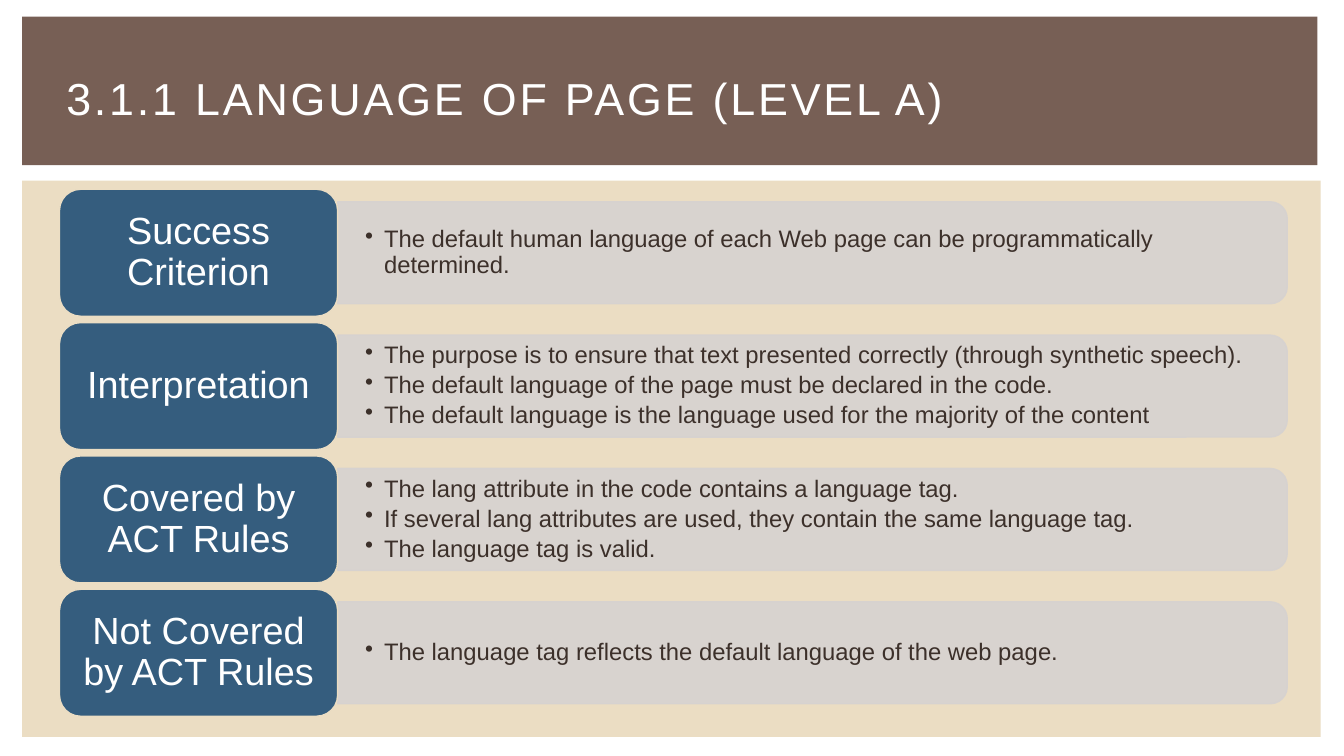
from lxml import etree
from pptx import Presentation
from pptx.dml.color import RGBColor
from pptx.enum.shapes import MSO_SHAPE
from pptx.enum.text import MSO_ANCHOR, MSO_AUTO_SIZE, PP_ALIGN
from pptx.oxml.ns import qn
from pptx.util import Cm, Pt

RECT = MSO_SHAPE.RECTANGLE
ROUNDED = MSO_SHAPE.ROUNDED_RECTANGLE
TWO_ROUNDED = MSO_SHAPE.ROUND_2_SAME_RECTANGLE
LEFT, CENTER = PP_ALIGN.LEFT, PP_ALIGN.CENTER
MIDDLE = MSO_ANCHOR.MIDDLE

WHITE = RGBColor(0xFF, 0xFF, 0xFF)
BROWN = RGBColor(0x77, 0x5F, 0x55)
SAND = RGBColor(0xEB, 0xDD, 0xC3)
GREY = RGBColor(0xD6, 0xD2, 0xD1)
BLUE = RGBColor(0x35, 0x5D, 0x7E)
DARK = RGBColor(0x3C, 0x30, 0x2A)
FONT = "Arial"

TITLE = "3.1.1 LANGUAGE OF PAGE (LEVEL A)"
SECTIONS = [
    ("Success Criterion", [
        "The default human language of each Web page can be programmatically determined.",
    ]),
    ("Interpretation", [
        "The purpose is to ensure that text presented correctly (through synthetic speech).",
        "The default language of the page must be declared in the code.",
        "The default language is the language used for the majority of the content",
    ]),
    ("Covered by ACT Rules", [
        "The lang attribute in the code contains a language tag.",
        "If several lang attributes are used, they contain the same language tag.",
        "The language tag is valid.",
    ]),
    ("Not Covered by ACT Rules", [
        "The language tag reflects the default language of the web page.",
    ]),
]

# Lengths in centimetres
BANDS = [(BROWN, (0.56, 0.42, 32.64, 3.74)), (SAND, (0.56, 4.55, 32.72, 14.02))]
FIRST_CENTER, ROW_PITCH = 6.37, 3.36
LABEL_LEFT, LABEL_WIDTH, LABEL_HEIGHT = 1.5, 7.01, 3.2
PANEL_WIDTH, PANEL_HEIGHT = 23.93, 2.57
PANEL_LEFT = LABEL_LEFT + LABEL_WIDTH
POINTS_WIDTH, POINTS_HEIGHT = 23.8, 2.31
BULLET_INDENT = Cm(0.48)


def add_filled(slide, kind, box, fill, line=None):
    shape = slide.shapes.add_shape(kind, *map(Cm, box))
    shape.shadow.inherit = False
    shape.fill.solid()
    shape.fill.fore_color.rgb = fill
    if line is None:
        shape.line.fill.background()
    else:
        shape.line.color.rgb = line
        shape.line.width = Pt(1)
    return shape


def format_frame(frame, size, color, align, margins, spacing=1, after=0):
    """Format all text of a frame; margins are (horizontal, vertical) in cm."""
    frame.word_wrap = True
    frame.auto_size = MSO_AUTO_SIZE.NONE
    frame.vertical_anchor = MIDDLE
    frame.margin_left = frame.margin_right = Cm(margins[0])
    frame.margin_top = frame.margin_bottom = Cm(margins[1])
    for paragraph in frame.paragraphs:
        paragraph.alignment = align
        paragraph.line_spacing = spacing
        paragraph.space_after = Pt(after)
        for run in paragraph.runs:
            run.font.name = FONT
            run.font.size = Pt(size)
            run.font.color.rgb = color


def add_bullet(paragraph):
    properties = paragraph._p.get_or_add_pPr()
    properties.set("marL", str(BULLET_INDENT))
    properties.set("indent", str(-BULLET_INDENT))
    etree.SubElement(properties, qn("a:buChar")).set("char", "•")


def add_panel(slide, center):
    """Turn a top-rounded bar by 90° so that its right end is rounded."""
    middle = PANEL_LEFT + PANEL_WIDTH / 2
    box = (middle - PANEL_HEIGHT / 2, center - PANEL_WIDTH / 2, PANEL_HEIGHT, PANEL_WIDTH)
    panel = add_filled(slide, TWO_ROUNDED, box, GREY, GREY)
    panel.rotation = 90
    for color in panel._element.spPr.iter(qn("a:srgbClr")):
        etree.SubElement(color, qn("a:alpha")).set("val", "90000")


def add_points(slide, center, points):
    box = (PANEL_LEFT, center - POINTS_HEIGHT / 2, POINTS_WIDTH, POINTS_HEIGHT)
    frame = slide.shapes.add_textbox(*map(Cm, box)).text_frame
    frame.text = "\n".join(points)
    format_frame(frame, 17, DARK, LEFT, (0.69, 0.36), 0.9, 3)
    for paragraph in frame.paragraphs:
        add_bullet(paragraph)


def add_label(slide, center, heading):
    box = (LABEL_LEFT, center - LABEL_HEIGHT / 2, LABEL_WIDTH, LABEL_HEIGHT)
    label = add_filled(slide, ROUNDED, box, BLUE, SAND)
    label.text_frame.text = heading
    format_frame(label.text_frame, 27, WHITE, CENTER, (0.28, 0.15), 0.9)


def main():
    prs = Presentation()
    prs.slide_width, prs.slide_height = Cm(33.87), Cm(19.05)
    slide = prs.slides.add_slide(prs.slide_layouts[5])

    title = slide.shapes.title
    title.left, title.top, title.width, title.height = map(Cm, (1.42, 0.99, 31.04, 2.92))
    title.text_frame.text = TITLE
    format_frame(title.text_frame, 32, WHITE, LEFT, (0.25, 0.13))
    title.text_frame.paragraphs[0].runs[0].font._element.set("spc", "200")

    for color, box in BANDS:
        band = add_filled(slide, RECT, box, color)
        title._element.addprevious(band._element)

    for row, (heading, points) in enumerate(SECTIONS):
        center = FIRST_CENTER + row * ROW_PITCH
        add_panel(slide, center)
        add_points(slide, center, points)
        add_label(slide, center, heading)

    prs.save("out.pptx")


if __name__ == "__main__":
    main()
